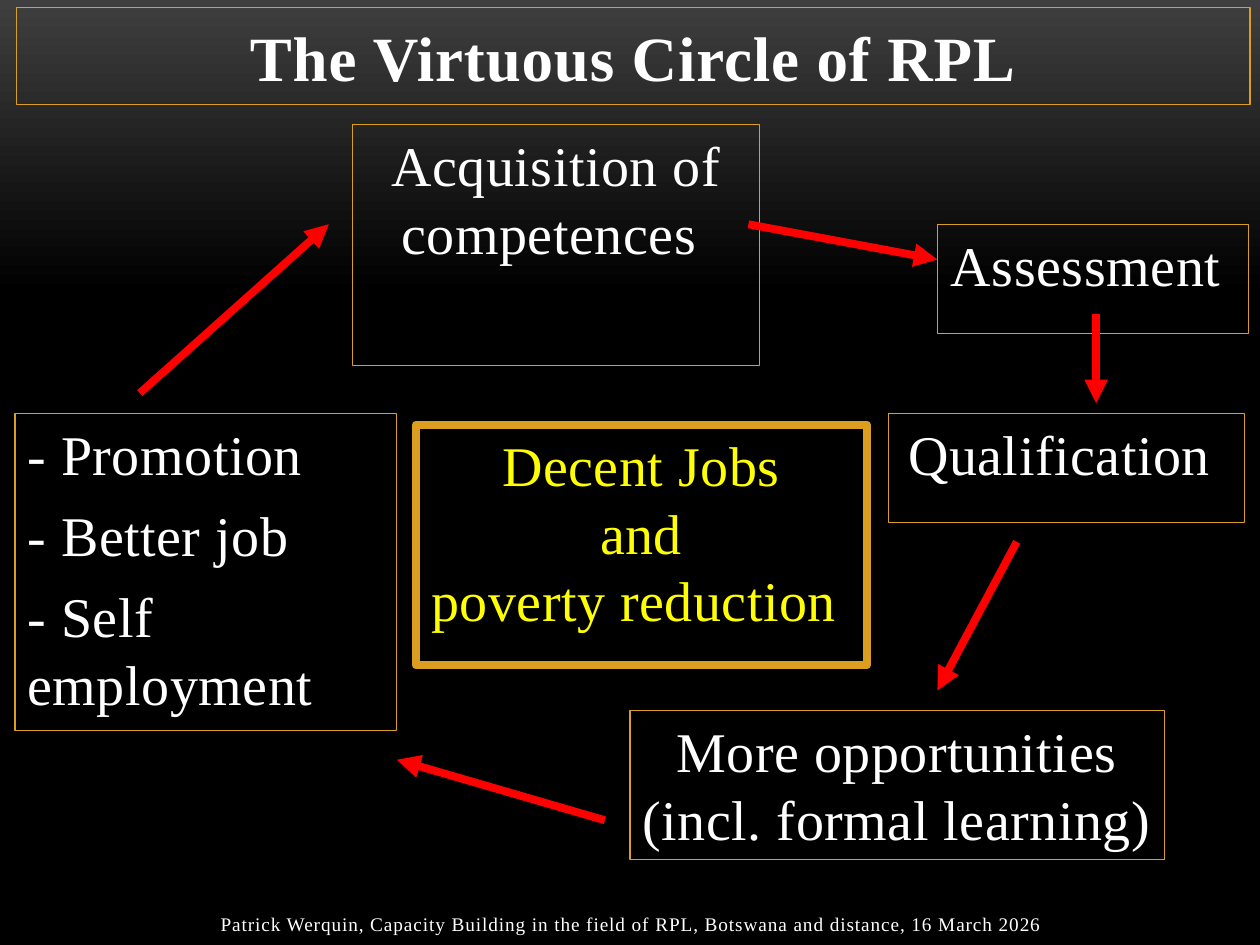
from dataclasses import dataclass

from copy import deepcopy
from pptx import Presentation
from pptx.dml.color import RGBColor
from pptx.enum.shapes import MSO_CONNECTOR, MSO_SHAPE
from pptx.enum.text import MSO_ANCHOR, PP_ALIGN
from pptx.oxml.ns import qn
from pptx.util import Inches, Pt
from lxml.etree import SubElement

HUES = {"gold": "DC9E1F", "red": "FF0000", "white": "FFFFFF",
        "yellow": "FFFF00", "grey": "3F3F3F", "black": "000000"}
FONT = "Times New Roman"


@dataclass
class Box:
    lines: list[str]
    left: float
    top: float
    width: float
    height: float
    hue: str = "white"
    edge: float = 0.75
    align: PP_ALIGN = PP_ALIGN.CENTER
    gap: float = 10


@dataclass
class Arrow:
    start: tuple[float, float]
    end: tuple[float, float]


BOXES = [
    Box(["Acquisition of competences "], 2.8, 0.99, 3.23, 1.91),
    Box(["Assessment "], 7.44, 1.78, 2.47, 0.87),
    Box(["More opportunities (incl. formal learning)"], 5, 5.64, 4.24, 1.18),
    Box(["Qualification "], 7.05, 3.28, 2.83, 0.87),
    Box(["- Promotion", "- Better job", "- Self employment"],
        0.12, 3.28, 3.03, 2.52, align=PP_ALIGN.LEFT, gap=4),
    Box(["Decent Jobs\n and \npoverty reduction "],
        3.3, 3.37, 3.58, 1.91, hue="yellow", edge=4.5),
]
ARROWS = [
    Arrow((5.94, 1.78), (7.44, 2.06)),
    Arrow((8.7, 2.49), (8.7, 3.2)),
    Arrow((8.07, 4.3), (7.44, 5.48)),
    Arrow((4.8, 6.51), (3.15, 6.03)),
    Arrow((1.11, 3.12), (2.61, 1.78)),
]


def color(name: str) -> RGBColor:
    return RGBColor.from_string(HUES[name])


def style(para, size: float, hue: str, track: int, bold: bool = False) -> None:
    """Format every run; track is in hundredths of a point."""
    for run in para.runs:
        font = run.font
        font.name, font.size, font.bold = FONT, Pt(size), bold
        font.color.rgb = color(hue)
        run._r.get_or_add_rPr().set("spc", str(track))


def outline(shape, width: float) -> None:
    shape.fill.background()
    shape.line.color.rgb = color("gold")
    shape.line.width = Pt(width)


def place(shape, left: float, top: float, width: float, height: float) -> None:
    shape.left, shape.top = Inches(left), Inches(top)
    shape.width, shape.height = Inches(width), Inches(height)


def draw_box(slide, box: Box) -> None:
    shape = slide.shapes.add_shape(
        MSO_SHAPE.RECTANGLE, Inches(box.left), Inches(box.top),
        Inches(box.width), Inches(box.height))
    shape.shadow.inherit = False
    outline(shape, box.edge)
    frame = shape.text_frame
    frame.word_wrap = True
    frame.vertical_anchor = MSO_ANCHOR.TOP
    for i, line in enumerate(box.lines):
        para = frame.add_paragraph() if i else frame.paragraphs[0]
        para.text = line
        para.alignment = box.align
        para.space_before = Pt(box.gap if i else 0)
        para.space_after = Pt(box.gap)
        style(para, 32, box.hue, 30)


def draw_arrow(slide, arrow: Arrow) -> None:
    ends = [Inches(n) for n in arrow.start + arrow.end]
    link = slide.shapes.add_connector(MSO_CONNECTOR.STRAIGHT, *ends)
    link.line.color.rgb = color("red")
    link.line.width = Pt(4.5)
    props = link._element.spPr
    SubElement(props.find(qn("a:ln")), qn("a:tailEnd"), type="triangle")
    SubElement(props, qn("a:effectLst"))


def paint(slide) -> None:
    """Fade the background from grey to black over its top third."""
    fill = slide.background.fill
    fill.gradient()
    fill.gradient_angle = 270
    for stop, hue, pos in zip(fill.gradient_stops, ("grey", "black"), (0, 0.31)):
        stop.color.rgb = color(hue)
        stop.position = pos
    mid = slide._element.findall(".//" + qn("a:gs"))[1]
    last = deepcopy(mid)
    last.set("pos", "100000")
    mid.addnext(last)


def main() -> None:
    deck = Presentation()
    deck.slide_width, deck.slide_height = Inches(10), Inches(7.5)
    slide = deck.slides.add_slide(deck.slide_layouts[5])
    paint(slide)

    # Title
    title = slide.shapes.title
    place(title, 0.13, 0.06, 9.79, 0.77)
    outline(title, 0.75)
    title.text_frame.text = "The Virtuous Circle of RPL"
    title.text_frame.vertical_anchor = MSO_ANCHOR.MIDDLE
    head = title.text_frame.paragraphs[0]
    head.alignment = PP_ALIGN.CENTER
    style(head, 36, "white", 50, bold=True)

    # Circle of steps around the goal
    for box in BOXES:
        draw_box(slide, box)
    for arrow in ARROWS:
        draw_arrow(slide, arrow)

    # Footer
    foot = slide.shapes.add_textbox(0, 0, 0, 0)
    place(foot, 0.04, 7.14, 9.94, 0.39)
    frame = foot.text_frame
    frame.word_wrap = True
    frame.vertical_anchor = MSO_ANCHOR.MIDDLE
    frame.text = ("Patrick Werquin, Capacity Building in the field of RPL, "
                  "Botswana and distance, 16 March 2026")
    frame.paragraphs[0].alignment = PP_ALIGN.CENTER
    style(frame.paragraphs[0], 11, "white", 50)

    deck.save("out.pptx")


if __name__ == "__main__":
    main()
